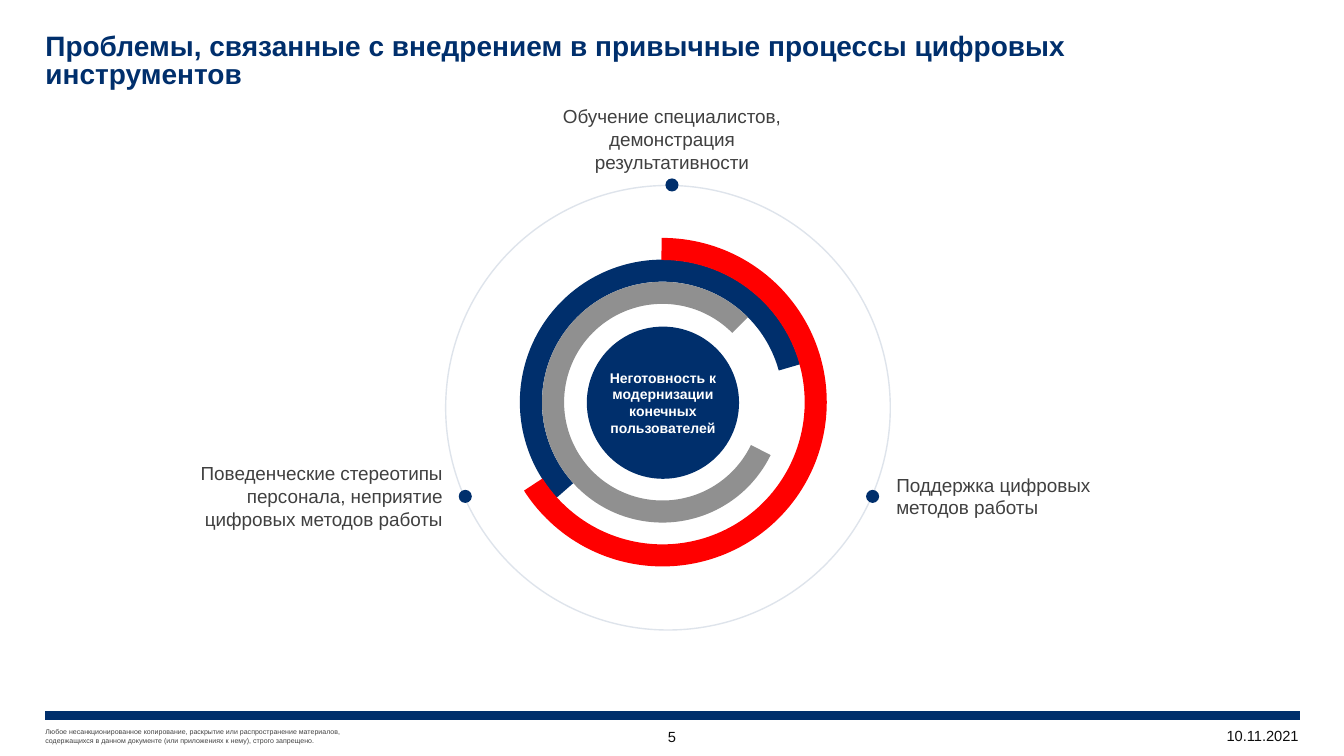
"""Build the slide on problems of introducing digital tools."""
from copy import deepcopy
from dataclasses import dataclass

from lxml import etree
from pptx import Presentation
from pptx.dml.color import RGBColor
from pptx.enum.shapes import MSO_CONNECTOR, MSO_SHAPE
from pptx.enum.text import MSO_ANCHOR as ANCHOR, PP_ALIGN as ALIGN
from pptx.oxml.ns import qn
from pptx.util import Inches, Pt

NAVY = RGBColor(0x00, 0x2F, 0x6C)
RED = RGBColor(0xFF, 0x00, 0x00)
GRAY = RGBColor(0x90, 0x90, 0x90)
TEXT = RGBColor(0x40, 0x40, 0x40)
BLACK = RGBColor(0x0D, 0x0D, 0x0D)
WHITE = RGBColor(0xFF, 0xFF, 0xFF)

CENTER_X, CENTER_Y = 6.57, 3.99
ARC_TURN = 105
ARC_WIDTH = 15.75
ADJ_PER_DEGREE = 0.6


@dataclass
class Arc:
    size: float
    start: float
    end: float
    color: RGBColor


@dataclass
class Label:
    text: str
    box: tuple[float, float, float, float]
    align: ALIGN
    dot: tuple[float, float]


ARCS = [
    Arc(2.61, 137.84, 344.67, NAVY),
    Arc(2.17, 25.94, 315.21, GRAY),
    Arc(3.04, 269.64, 147.48, RED),
]
LABELS = [
    Label("Поддержка цифровых методов работы",
          (8.89, 4.54, 2.54, 0.76), ALIGN.LEFT, (8.59, 4.86)),
    Label("Поведенческие стереотипы персонала, неприятие цифровых методов работы",
          (1.85, 4.54, 2.54, 0.76), ALIGN.RIGHT, (4.55, 4.86)),
    Label("Обучение специалистов, демонстрация результативности",
          (5.53, 1, 2.27, 0.76), ALIGN.CENTER, (6.6, 1.77)),
]


def write(tf, text: str, *, size: float, color: RGBColor = TEXT, bold: bool = False,
          align: ALIGN = ALIGN.LEFT, anchor: ANCHOR = ANCHOR.MIDDLE,
          spacing: float | None = None, top: float = 0) -> None:
    tf.word_wrap = True
    tf.vertical_anchor = anchor
    tf.margin_left = tf.margin_right = tf.margin_bottom = 0
    tf.margin_top = Inches(top)
    p = tf.paragraphs[0]
    p.text = text
    p.alignment = align
    if spacing:
        p.line_spacing = spacing
    for r in p.runs:
        r.font.name = "Arial"
        r.font.size = Pt(size)
        r.font.bold = bold
        r.font.color.rgb = color
    for br in p._p.findall(qn("a:br")):
        br.append(deepcopy(p.runs[0]._r.rPr))


def add_text(s, text: str, box: tuple[float, float, float, float], **fmt) -> None:
    write(s.shapes.add_textbox(*map(Inches, box)).text_frame, text, **fmt)


def add_round(shapes, kind: MSO_SHAPE, left: float, top: float, size: float, *,
              fill: RGBColor | None = None, line: RGBColor | None = None,
              width: float = 1):
    sp = shapes.add_shape(kind, *map(Inches, (left, top, size, size)))
    sp.shadow.inherit = False
    if fill is None:
        sp.fill.background()
    else:
        sp.fill.solid()
        sp.fill.fore_color.rgb = fill
    if line is None:
        sp.line.fill.background()
    else:
        sp.line.color.rgb = line
        sp.line.width = Pt(width)
    return sp


def add_arc(shapes, arc: Arc) -> None:
    half = arc.size / 2
    sp = add_round(shapes, MSO_SHAPE.ARC, CENTER_X - half, CENTER_Y - half, arc.size,
                   line=arc.color, width=ARC_WIDTH)
    sp.rotation = ARC_TURN
    for i, angle in enumerate((arc.start, arc.end)):
        sp.adjustments[i] = (angle - ARC_TURN) % 360 * ADJ_PER_DEGREE


def add_footer(s) -> None:
    add_text(s, "Любое несанкционированное копирование, раскрытие или распространение "
             "материалов,\vсодержащихся в данном документе (или приложениях к нему), "
             "строго запрещено.", (0.45, 7.22, 5.12, 0.17), size=5)
    bar = s.shapes.add_connector(MSO_CONNECTOR.STRAIGHT,
                                 *map(Inches, (0.45, 7.1, 12.89, 7.1)))
    bar.line.color.rgb = NAVY
    bar.line.width = Pt(6)
    etree.SubElement(bar._element.spPr, qn("a:effectLst"))
    add_text(s, "5", (6.31, 7.18, 0.71, 0.25), size=10.5, color=BLACK, align=ALIGN.CENTER)
    add_text(s, "10.11.2021", (11.94, 7.21, 0.94, 0.18), size=10.5, color=BLACK,
             align=ALIGN.RIGHT, anchor=ANCHOR.TOP)


def add_diagram(s) -> None:
    orbit = add_round(s.shapes, MSO_SHAPE.OVAL, 4.42, 1.84, 4.41, line=NAVY)
    rgb = orbit.line._ln.find(".//" + qn("a:srgbClr"))
    etree.SubElement(rgb, qn("a:alpha"), val="13000")
    arcs = s.shapes.add_group_shape()
    for arc in ARCS:
        add_arc(arcs.shapes, arc)
    for label in LABELS:
        add_text(s, label.text, label.box, size=13.5, align=label.align)
        add_round(s.shapes, MSO_SHAPE.OVAL, *label.dot, 0.13, fill=NAVY)
    core = add_round(s.shapes, MSO_SHAPE.OVAL, 5.82, 3.24, 1.51, fill=NAVY)
    write(core.text_frame, "Неготовность к модернизации конечных пользователей",
          size=10, color=WHITE, bold=True, align=ALIGN.CENTER)


def main() -> None:
    prs = Presentation()
    prs.slide_width, prs.slide_height = Inches(13.33), Inches(7.5)
    s = prs.slides.add_slide(prs.slide_layouts[6])
    add_footer(s)
    add_text(s, "Проблемы, связанные с внедрением в привычные процессы цифровых инструментов",
             (0.45, 0.29, 11.35, 0.61), size=20, color=NAVY, bold=True,
             spacing=0.85, top=0.04)
    add_diagram(s)
    prs.save("out.pptx")


if __name__ == "__main__":
    main()
